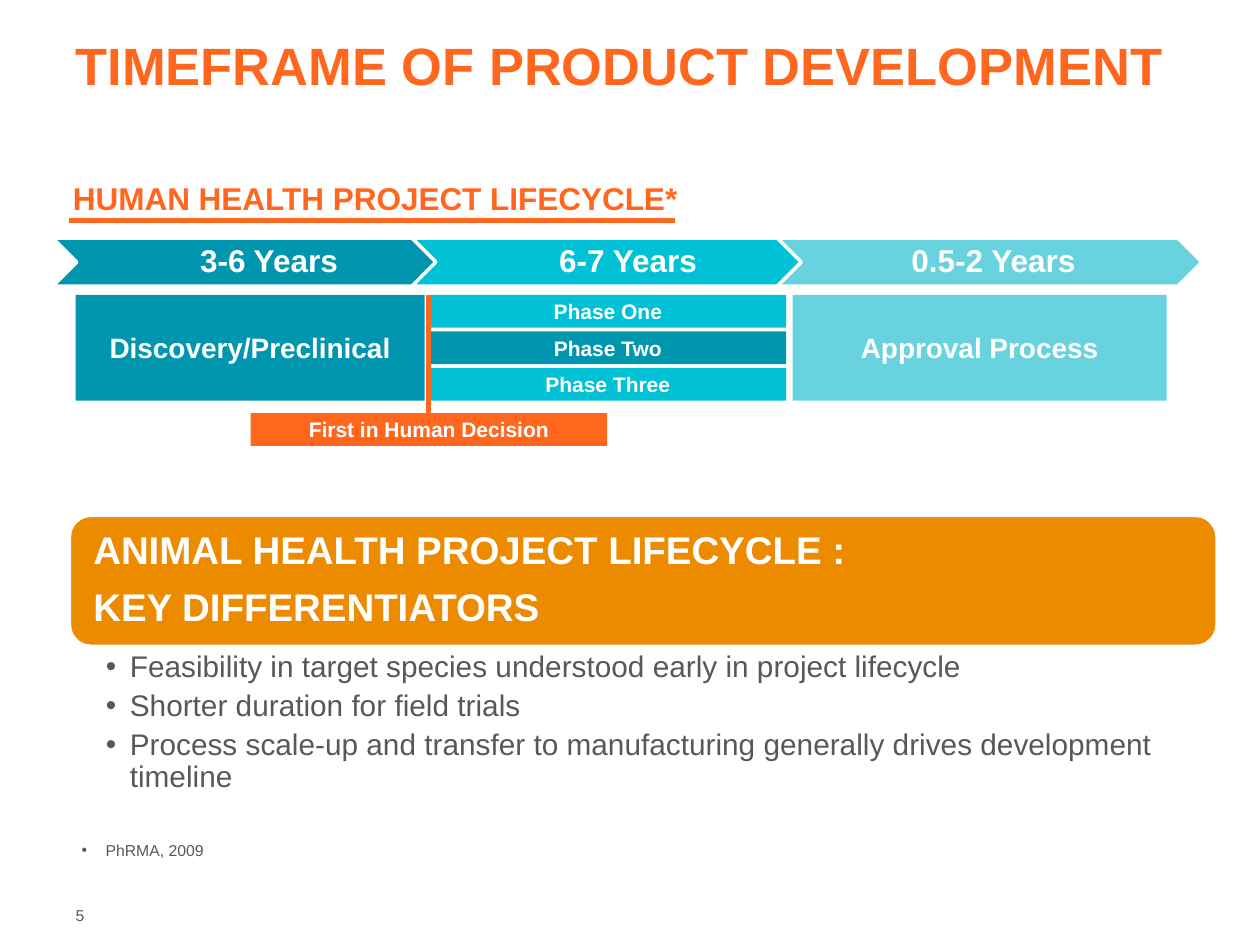
from lxml import etree
from pptx import Presentation
from pptx.dml.color import RGBColor
from pptx.enum.shapes import MSO_CONNECTOR, MSO_SHAPE
from pptx.enum.text import MSO_ANCHOR, PP_ALIGN
from pptx.oxml.ns import qn
from pptx.util import Pt

PX = 9144
LEFT, CENTER = PP_ALIGN.LEFT, PP_ALIGN.CENTER
TOP, MIDDLE, BOTTOM = MSO_ANCHOR.TOP, MSO_ANCHOR.MIDDLE, MSO_ANCHOR.BOTTOM
RECT, ROUND = MSO_SHAPE.RECTANGLE, MSO_SHAPE.ROUNDED_RECTANGLE
STRAIGHT = MSO_CONNECTOR.STRAIGHT
COLORS = {
    "white": "FFFFFF", "grey": "585858", "orange": "FF671F", "amber": "ED8B00",
    "teal": "0096AF", "cyan": "00C1D5", "pale": "68D2DF",
}


def color(name):
    return RGBColor.from_string(COLORS[name])


def emu(*sizes):
    return [size * PX for size in sizes]


def add_bullet(para):
    props = para._p.get_or_add_pPr()
    props.set("marL", str(19 * PX))
    props.set("indent", str(-19 * PX))
    etree.SubElement(props, qn("a:buFont")).set("typeface", "Arial")
    etree.SubElement(props, qn("a:buChar")).set("char", "•")


def write(shape, text, size, tint="white", bold=True, align=CENTER, anchor=MIDDLE,
          inset=(10, 5, 10, 5), spacing=None, after=0, bullet=False, wrap=True):
    frame = shape.text_frame
    frame.text = text
    frame.word_wrap = wrap
    frame.vertical_anchor = anchor
    frame.margin_left, frame.margin_top, frame.margin_right, frame.margin_bottom = emu(*inset)
    for para in frame.paragraphs:
        para.alignment = align
        para.space_before = Pt(0)
        para.space_after = Pt(after)
        if spacing:
            para.line_spacing = spacing
        if bullet:
            add_bullet(para)
        for run in para.runs:
            font = run.font
            font.name, font.size, font.bold = "Arial", Pt(size), bold
            font.color.rgb = color(tint)


def paint(shape, fill, edge=None):
    shape.shadow.inherit = False
    shape.fill.solid()
    shape.fill.fore_color.rgb = color(fill)
    if edge:
        shape.line.color.rgb = color(edge)
        shape.line.width = Pt(2)
    else:
        shape.line.fill.background()


def add_text(slide, box, text, size, tint, **style):
    write(slide.shapes.add_textbox(*emu(*box)), text, size, tint, **style)


def add_block(slide, box, text, size, fill):
    block = slide.shapes.add_shape(RECT, *emu(*box))
    paint(block, fill)
    write(block, text, size)


def add_rule(slide, *ends):
    rule = slide.shapes.add_connector(STRAIGHT, *emu(*ends))
    rule.line.color.rgb = color("orange")
    rule.line.width = Pt(3)
    etree.SubElement(rule._element.spPr, qn("a:effectLst"))


def add_arrow(slide, box, text, fill):
    x, y, w, h = box
    notch = h // 2
    outline = slide.shapes.build_freeform(x, y, scale=PX)
    outline.add_line_segments([
        (x + w - notch, y), (x + w, y + notch), (x + w - notch, y + h),
        (x, y + h), (x + notch, y + notch),
    ], close=True)
    arrow = outline.convert_to_shape()
    paint(arrow, fill, "white")
    write(arrow, text, 18, inset=(28, 3, 22, 3), spacing=0.9)


def add_title(slide, box):
    title = slide.shapes.title
    title.left, title.top, title.width, title.height = emu(*box)
    write(title, "TIMEFRAME OF PRODUCT DEVELOPMENT", 30, "orange",
          align=LEFT, anchor=TOP)


def add_human(slide, box):
    x, y, w, h = box
    add_text(slide, (x + 6, y, 505, 40), "HUMAN HEALTH PROJECT LIFECYCLE*", 18,
             "orange", align=LEFT, anchor=TOP, wrap=False)
    add_rule(slide, x + 13, y + 38, x + 494, y + 38)

    stages = [(0, "3-6 Years", "teal"), (285, "6-7 Years", "cyan"),
              (575, "0.5-2 Years", "pale")]
    for shift, text, fill in stages:
        add_arrow(slide, (x + shift, y + 52, 337, 38), text, fill)

    top = y + 97
    add_block(slide, (x + 18, top, 277, 84), "Discovery/Preclinical", 16, "teal")
    phases = [("One", "cyan"), ("Two", "teal"), ("Three", "cyan")]
    for row, (name, fill) in enumerate(phases):
        add_block(slide, (x + 299, top + 29 * row, 283, 26), f"Phase {name}", 12, fill)
    add_block(slide, (x + 587, top, 297, 84), "Approval Process", 16, "pale")

    add_block(slide, (x + 157, y + h - 26, 283, 26), "First in Human Decision",
              12, "orange")
    add_rule(slide, x + 298, top, x + 298, y + h - 26)


def add_animal(slide, box):
    x, y, w, h = box
    head = 104
    banner = slide.shapes.add_shape(ROUND, *emu(x, y, w, head))
    paint(banner, "amber", "white")
    write(banner, "ANIMAL HEALTH PROJECT LIFECYCLE :\nKEY DIFFERENTIATORS", 22,
          align=LEFT, inset=(14, 9, 14, 9), spacing=0.9, after=9)
    points = [
        "Feasibility in target species understood early in project lifecycle",
        "Shorter duration for field trials",
        "Process scale-up and transfer to manufacturing generally drives "
        "development timeline",
    ]
    add_text(slide, (x, y + head + 1, w, h - head - 1), "\n".join(points), 17, "grey",
             bold=False, align=LEFT, anchor=TOP, inset=(29, 3, 17, 3),
             spacing=0.9, after=4, bullet=True)


def add_foot(slide, box):
    x, y, w, h = box
    add_text(slide, (x, y, w, 40), "PhRMA, 2009", 9, "grey", bold=False,
             align=LEFT, anchor=TOP, bullet=True)
    add_text(slide, (x + 5, y + h - 27, 37, 27), "5", 9, "grey", bold=False,
             align=LEFT, anchor=BOTTOM, inset=(0, 5, 0, 5))


def main():
    deck = Presentation()
    deck.slide_width, deck.slide_height = emu(1000, 750)
    slide = deck.slides.add_slide(deck.slide_layouts[5])
    add_title(slide, (50, 21, 912, 106))
    add_human(slide, (42, 137, 912, 217))
    add_animal(slide, (55, 409, 911, 222))
    add_foot(slide, (55, 662, 633, 77))
    deck.save("out.pptx")


if __name__ == "__main__":
    main()
